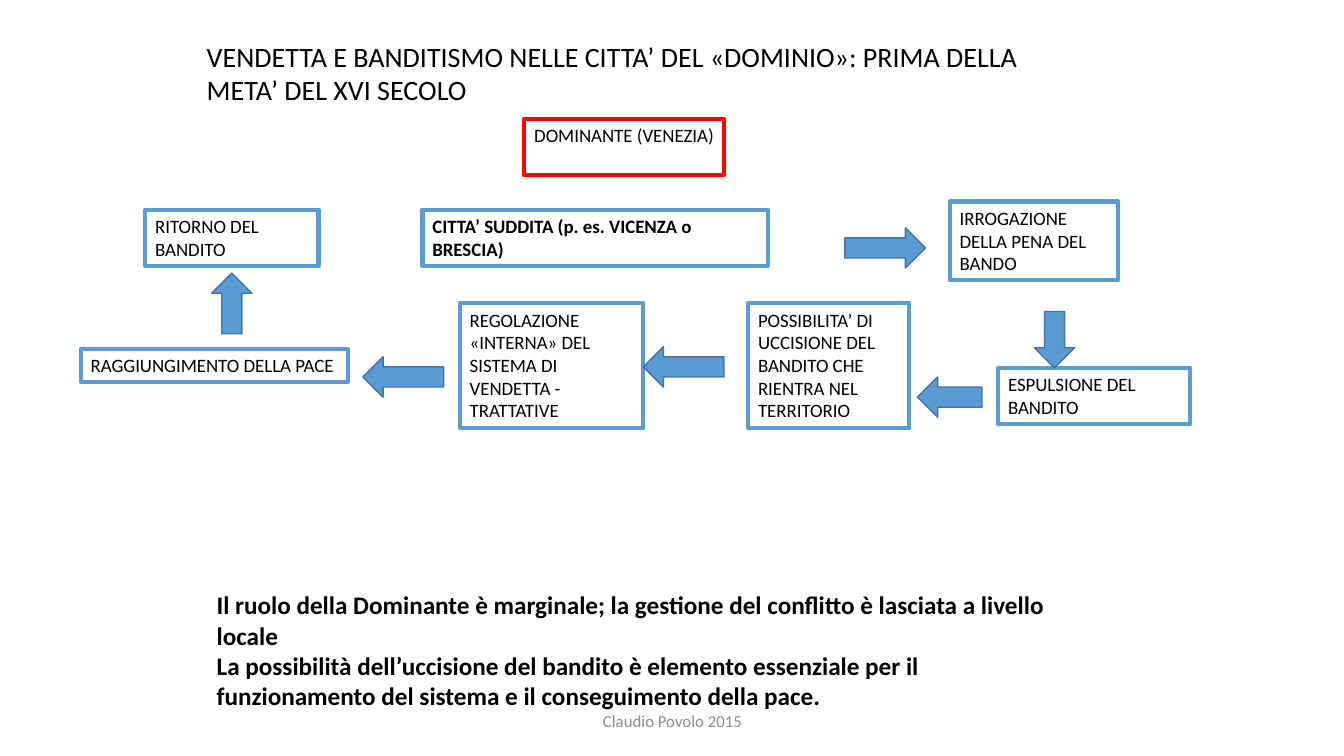
from pptx import Presentation
from pptx import util as u
from pptx.dml import color
from pptx.enum import shapes, text

HUES = {"ink": "000000", "red": "FF0000", "blue": "5B9BD5",
        "edge": "43739E", "gray": "8C8C8C"}
FONT = "Calibri"
KIND = shapes.MSO_SHAPE
LEFT, MID = text.PP_ALIGN.LEFT, text.PP_ALIGN.CENTER
TOP, HALF = text.MSO_ANCHOR.TOP, text.MSO_ANCHOR.MIDDLE

BOXES = [
    ("DOMINANTE (VENEZIA)", (5.2, 1.18, 1.98, 0.56), "red", False),
    ("CITTA’ SUDDITA (p. es. VICENZA o BRESCIA)",
     (4.19, 2.08, 3.43, 0.56), "blue", True),
    ("IRROGAZIONE DELLA PENA DEL BANDO",
     (9.42, 2, 1.67, 0.78), "blue", False),
    ("ESPULSIONE DEL BANDITO", (9.9, 3.65, 1.9, 0.56), "blue", False),
    ("POSSIBILITA’ DI UCCISIONE DEL BANDITO CHE RIENTRA NEL TERRITORIO",
     (7.42, 3.01, 1.6, 1.24), "blue", False),
    ("REGOLAZIONE «INTERNA» DEL SISTEMA DI VENDETTA - TRATTATIVE",
     (4.56, 3.01, 1.82, 1.24), "blue", False),
    ("RAGGIUNGIMENTO DELLA PACE", (0.8, 3.46, 2.65, 0.33), "blue", False),
    ("RITORNO DEL BANDITO", (1.44, 2.08, 1.72, 0.56), "blue", False),
]

ARROWS = [
    (KIND.RIGHT_ARROW, (8.38, 2.26, 0.8, 0.4)),
    (KIND.DOWN_ARROW, (10.26, 3.09, 0.4, 0.56)),
    (KIND.LEFT_ARROW, (9.1, 3.74, 0.64, 0.4)),
    (KIND.LEFT_ARROW, (6.38, 3.44, 0.8, 0.4)),
    (KIND.LEFT_ARROW, (3.6, 3.54, 0.8, 0.4)),
    (KIND.UP_ARROW, (2.1, 2.71, 0.4, 0.6)),
]

NOTES = [
    "Il ruolo della Dominante è marginale; la gestione del conflitto "
    "è lasciata a livello locale",
    "La possibilità dell’uccisione del bandito è elemento essenziale per il "
    "funzionamento del sistema e il conseguimento della pace.",
]


def hue(name):
    return color.RGBColor.from_string(HUES[name])


def place(shape, area):
    shape.left, shape.top, shape.width, shape.height = map(u.Inches, area)


def write(shape, lines, size, bold=False, ink="ink", align=LEFT, anchor=TOP):
    frame = shape.text_frame
    frame.word_wrap = True
    frame.auto_size = text.MSO_AUTO_SIZE.NONE
    frame.vertical_anchor = anchor
    for i, line in enumerate(lines):
        para = frame.add_paragraph() if i else frame.paragraphs[0]
        para.alignment = align
        run = para.add_run()
        run.text = line
        run.font.name = FONT
        run.font.size = u.Pt(size)
        run.font.bold = bold
        run.font.color.rgb = hue(ink)


def add_text(slide, area, lines, size, **style):
    shape = slide.shapes.add_textbox(*map(u.Inches, area))
    write(shape, lines, size, **style)
    return shape


def add_box(slide, label, area, edge, bold):
    box = add_text(slide, area, [label], 13.5, bold=bold)
    box.line.color.rgb = hue(edge)
    box.line.width = u.Pt(3)


def add_arrow(slide, kind, area):
    arrow = slide.shapes.add_shape(kind, *map(u.Inches, area))
    arrow.shadow.inherit = False
    arrow.fill.solid()
    arrow.fill.fore_color.rgb = hue("blue")
    arrow.line.color.rgb = hue("edge")
    arrow.line.width = u.Pt(1)


def main():
    deck = Presentation()
    deck.slide_width, deck.slide_height = u.Inches(13.33), u.Inches(7.5)
    slide = deck.slides.add_slide(deck.slide_layouts[5])
    title = slide.shapes.title
    place(title, (1.95, 0.34, 8.96, 0.77))
    write(title, ["VENDETTA E BANDITISMO NELLE CITTA’ DEL «DOMINIO»: "
                  "PRIMA DELLA META’ DEL XVI SECOLO"], 20)
    for box in BOXES:
        add_box(slide, *box)
    for arrow in ARROWS:
        add_arrow(slide, *arrow)
    add_text(slide, (2.05, 5.8, 8.75, 1.31), NOTES, 18, bold=True)
    add_text(slide, (4.42, 6.95, 4.5, 0.4), ["Claudio Povolo 2015"], 12,
             ink="gray", align=MID, anchor=HALF)
    deck.save("out.pptx")


if __name__ == "__main__":
    main()
